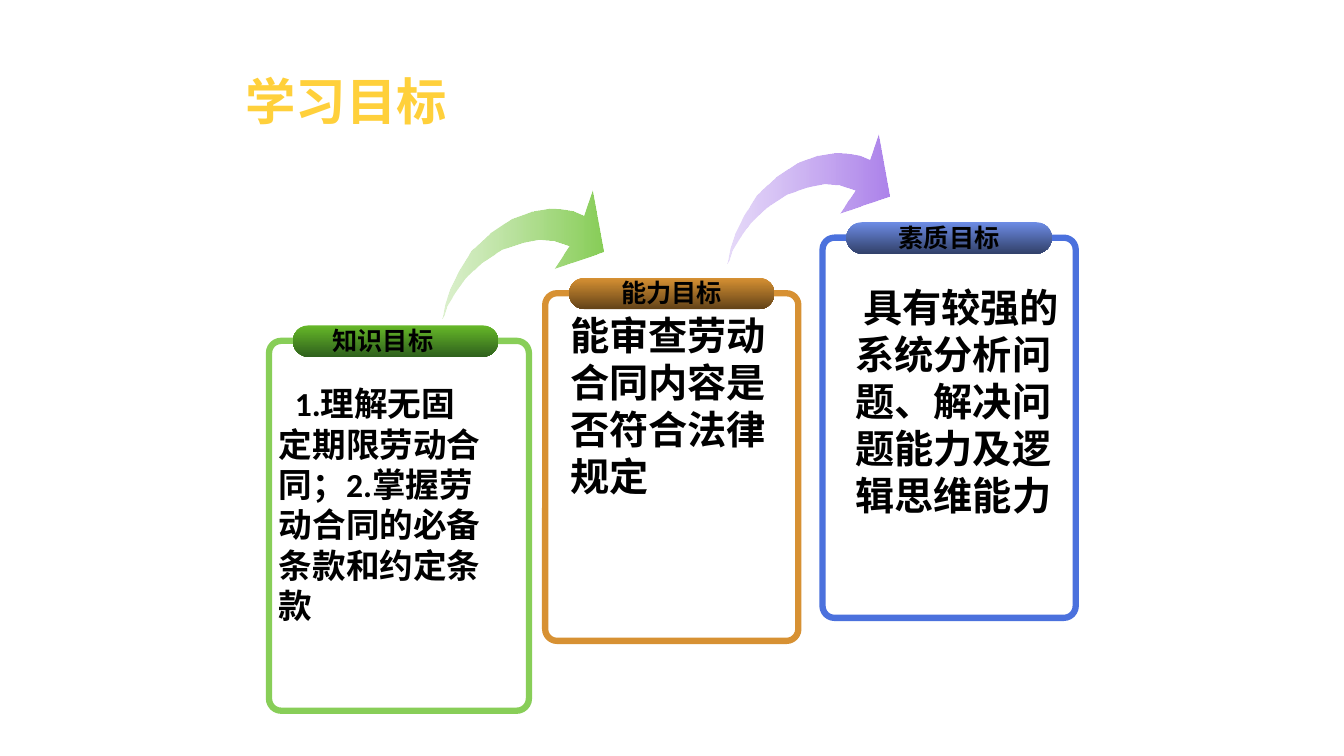
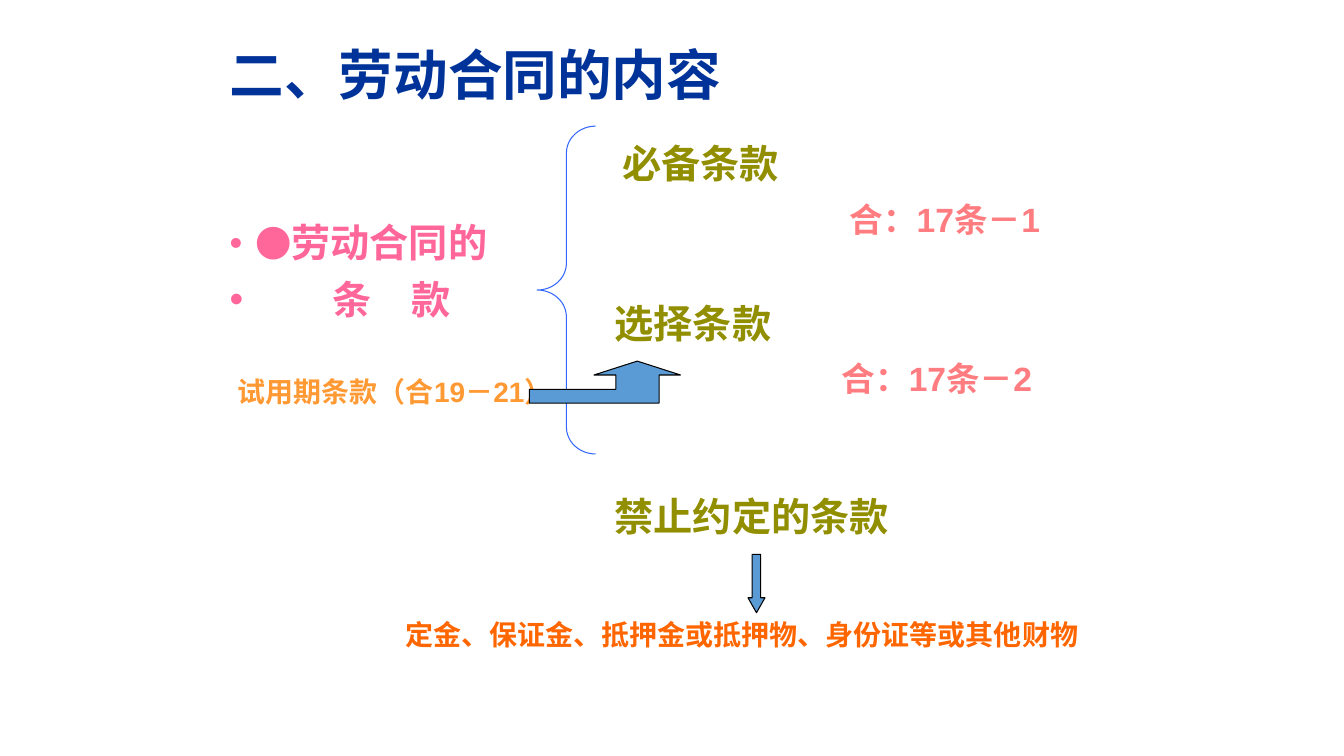
"""Build two slides on labour contracts: learning goals and contract terms."""
from lxml import etree
from pptx import Presentation
from pptx.dml.color import RGBColor
from pptx.enum.shapes import MSO_SHAPE
from pptx.enum.text import MSO_ANCHOR, PP_ALIGN
from pptx.oxml.ns import qn
from pptx.util import Cm, Pt

ROUND_RECT = MSO_SHAPE.ROUNDED_RECTANGLE
LEFT_BRACE = MSO_SHAPE.LEFT_BRACE
DOWN_ARROW = MSO_SHAPE.DOWN_ARROW
MIDDLE = MSO_ANCHOR.MIDDLE
CENTER = PP_ALIGN.CENTER

BLACK = RGBColor(0x00, 0x00, 0x00)
GOLD = RGBColor(0xFF, 0xD0, 0x3B)
NAVY = RGBColor(0x00, 0x33, 0x99)
GREEN = RGBColor(0x88, 0xCE, 0x58)
LIGHT_GREEN = RGBColor(0x93, 0xD2, 0x67)
LEAF = RGBColor(0x66, 0xB8, 0x28)
DARK_GREEN = RGBColor(0x2F, 0x61, 0x1D)
OCHRE = RGBColor(0xD7, 0x91, 0x33)
BROWN = RGBColor(0x63, 0x43, 0x18)
BLUE = RGBColor(0x4B, 0x71, 0xDD)
LIGHT_BLUE = RGBColor(0x6D, 0x8C, 0xE5)
DARK_BLUE = RGBColor(0x32, 0x41, 0x6A)
LILAC = RGBColor(0xB4, 0x8E, 0xED)
PURPLE = RGBColor(0xAD, 0x83, 0xEB)
PINK = RGBColor(0xFF, 0x66, 0x99)
OLIVE = RGBColor(0x91, 0x8E, 0x00)
SALMON = RGBColor(0xFF, 0x7C, 0x80)
AMBER = RGBColor(0xFF, 0x99, 0x33)
ORANGE = RGBColor(0xFF, 0x66, 0x00)
BRACE_BLUE = RGBColor(0x33, 0x66, 0xFF)
ARROW_BLUE = RGBColor(0x5B, 0x9B, 0xD5)

TITLE_FONT, CARD_FONT, TERM_FONT = "Noto Sans CJK SC", "Calibri", "Arial"

GOALS_TITLE = ("学习目标", (5.94, 1.63, 22, 1.8), TITLE_FONT, 36, GOLD)
CARDS = [
    dict(label="知识目标", text="1.理解无固定期限劳动合同；2.掌握劳动合同的必备条款和约定条款",
         box=(6.78, 8.59, 6.55, 9.32), body=(6.78, 9.53), size=24, indent=0.4,
         label_shift=-0.32, line=GREEN, pill=(LEAF, DARK_GREEN)),
    dict(label="能力目标", text="能审查劳动合同内容是否符合法律规定",
         box=(13.74, 7.39, 6.38, 8.76), body=(14.12, 7.72), size=28, indent=0,
         label_shift=0, line=OCHRE, pill=(OCHRE, BROWN)),
    dict(label="素质目标", text="具有较强的系统分析问题、解决问题能力及逻辑思维能力",
         box=(20.73, 5.99, 6.38, 9.58), body=(21.31, 7.01), size=28, indent=0.2,
         label_shift=0, line=BLUE, pill=(LIGHT_BLUE, DARK_BLUE)),
]
PILL_W, PILL_H = 5.18, 0.79
LABEL_W, LABEL_H = 3.07, 1.02
BODY_W, BODY_H = 5.77, 6

SWOOSH = [
    (0, 323), (5, 315), (13, 290), (33, 257), (58, 221), (99, 183), (150, 150),
    (203, 132), (246, 124), (282, 127), (305, 135), (320, 140), (282, 198),
    (407, 155), (378, 0), (356, 64), (333, 53), (305, 48), (269, 46), (224, 53),
    (175, 71), (122, 107), (74, 152), (43, 201), (20, 246), (8, 284),
]
SWOOSHES = [((11.15, 4.8), (LIGHT_GREEN, GREEN)), ((18.34, 3.4), (LILAC, PURPLE))]

TERMS_TITLE = ("二、劳动合同的内容", (5.54, 0.91, 16, 1.91), TERM_FONT, 39, NAVY)
TOPIC_BOX = (5.54, 5.52, 7.5, 3)
TOPIC = [
    (0.64, 0, [("●", 26, False), ("劳动合同的", 28, True)]),
    (2.6, 10, [("条　款", 28, True)]),
]
TERMS = [
    ("必备条款", (15.44, 3.38, 5.08, 1.45), 28, OLIVE),
    ("选择条款", (15.24, 7.42, 5.72, 1.45), 28, OLIVE),
    ("禁止约定的条款", (15.24, 12.27, 8.05, 1.45), 28, OLIVE),
    ("合：17条－1", (21.16, 4.88, 5.51, 1.27), 24, SALMON),
    ("合：17条－2", (20.96, 8.89, 5.92, 1.27), 24, SALMON),
    ("试用期条款（合19－21）", (5.74, 9.32, 8.89, 1.09), 20, AMBER),
    ("定金、保证金、抵押金或抵押物、身份证等或其他财物", (9.96, 15.44, 18.21, 1.09), 20, ORANGE),
]
BRACE_BOX = (13.54, 3.18, 1.47, 8.26)
DOWN_BOX = (18.85, 13.97, 0.43, 1.47)
BENT_ORIGIN = (13.34, 9.1)
BENT = [(272, 0), (163, 35), (218, 35), (218, 71), (0, 71), (0, 106),
        (327, 106), (327, 35), (381, 35)]


def cm(values):
    return [Cm(v) for v in values]


def add_run(p, text, **fmt):
    r = p.add_run()
    r.text = text
    color = fmt.pop("color")
    for name, value in fmt.items():
        setattr(r.font, name, value)
    r.font.color.rgb = color


def add_text(s, text, box, font, size, color, align=None, anchor=None, indent=0):
    tf = s.shapes.add_textbox(*cm(box)).text_frame
    tf.word_wrap = True
    tf.vertical_anchor = anchor
    p = tf.paragraphs[0]
    p.alignment = align
    if indent:
        p._p.get_or_add_pPr().set("indent", str(Cm(indent)))
    add_run(p, text, name=font, size=Pt(size), bold=True, color=color)


def style(sp, fill=None, line=None, width=0.75):
    sp.shadow.inherit = False
    if fill is None:
        sp.fill.background()
    else:
        sp.fill.solid()
        sp.fill.fore_color.rgb = fill
    if line is None:
        sp.line.fill.background()
    else:
        sp.line.color.rgb = line
        sp.line.width = Pt(width)


def add_preset(s, kind, box, adjustments, **look):
    sp = s.shapes.add_shape(kind, *cm(box))
    for i, value in enumerate(adjustments):
        sp.adjustments[i] = value
    style(sp, **look)
    return sp


def add_outline(s, points, origin, **look):
    builder = s.shapes.build_freeform(*points[0], scale=Cm(0.01))
    builder.add_line_segments(points[1:], close=True)
    sp = builder.convert_to_shape(*cm(origin))
    style(sp, **look)
    return sp


def set_gradient(sp, colors, angle, first_alpha=None):
    sp.fill.gradient()
    sp.fill.gradient_angle = angle
    for stop, color in zip(sp.fill.gradient_stops, colors):
        stop.color.rgb = color
    if first_alpha:
        first = next(sp._element.spPr.iter(qn("a:srgbClr")))
        etree.SubElement(first, qn("a:alpha")).set("val", str(first_alpha * 1000))


def add_card(s, card):
    left, top = card["box"][:2]
    pill_x, pill_y = left + 0.6, top - 0.39
    add_preset(s, ROUND_RECT, card["box"], [0.047], line=card["line"], width=4.5)
    pill = add_preset(s, ROUND_RECT, (pill_x, pill_y, PILL_W, PILL_H), [0.5])
    set_gradient(pill, card["pill"], 270)
    label_x = pill_x + (PILL_W - LABEL_W) / 2 + card["label_shift"]
    add_text(s, card["label"], (label_x, pill_y - 0.13, LABEL_W, LABEL_H),
             CARD_FONT, 18, BLACK, align=CENTER)
    add_text(s, card["text"], (*card["body"], BODY_W, BODY_H),
             CARD_FONT, card["size"], BLACK, indent=card["indent"])


def add_topic(s):
    tf = s.shapes.add_textbox(*cm(TOPIC_BOX)).text_frame
    tf.word_wrap = True
    for i, (margin, before, runs) in enumerate(TOPIC):
        p = tf.add_paragraph() if i else tf.paragraphs[0]
        p.line_spacing = 0.9
        p.space_before = Pt(before)
        pPr = p._p.get_or_add_pPr()
        pPr.set("marL", str(Cm(margin)))
        pPr.set("indent", str(-Cm(margin)))
        etree.SubElement(pPr, qn("a:buFont")).set("typeface", TERM_FONT)
        etree.SubElement(pPr, qn("a:buChar")).set("char", "•")
        for text, size, bold in runs:
            add_run(p, text, name=CARD_FONT, size=Pt(size), bold=bold, color=PINK)


def build_goals(s):
    add_text(s, *GOALS_TITLE, anchor=MIDDLE)
    for card in CARDS:
        add_card(s, card)
    for origin, colors in SWOOSHES:
        set_gradient(add_outline(s, SWOOSH, origin), colors, 0, first_alpha=32)


def build_terms(s):
    add_text(s, *TERMS_TITLE)
    add_topic(s)
    add_preset(s, LEFT_BRACE, BRACE_BOX, [0.461, 0.5], line=BRACE_BLUE)
    for text, box, size, color in TERMS:
        add_text(s, text, box, TERM_FONT, size, color)
    add_outline(s, BENT, BENT_ORIGIN, fill=ARROW_BLUE, line=BLACK)
    add_preset(s, DOWN_ARROW, DOWN_BOX, [0.5, 0.875], fill=ARROW_BLUE, line=BLACK)


def main():
    prs = Presentation()
    prs.slide_width, prs.slide_height = Cm(33.87), Cm(19.05)
    for build in (build_goals, build_terms):
        build(prs.slides.add_slide(prs.slide_layouts[6]))
    prs.save("out.pptx")


if __name__ == "__main__":
    main()
